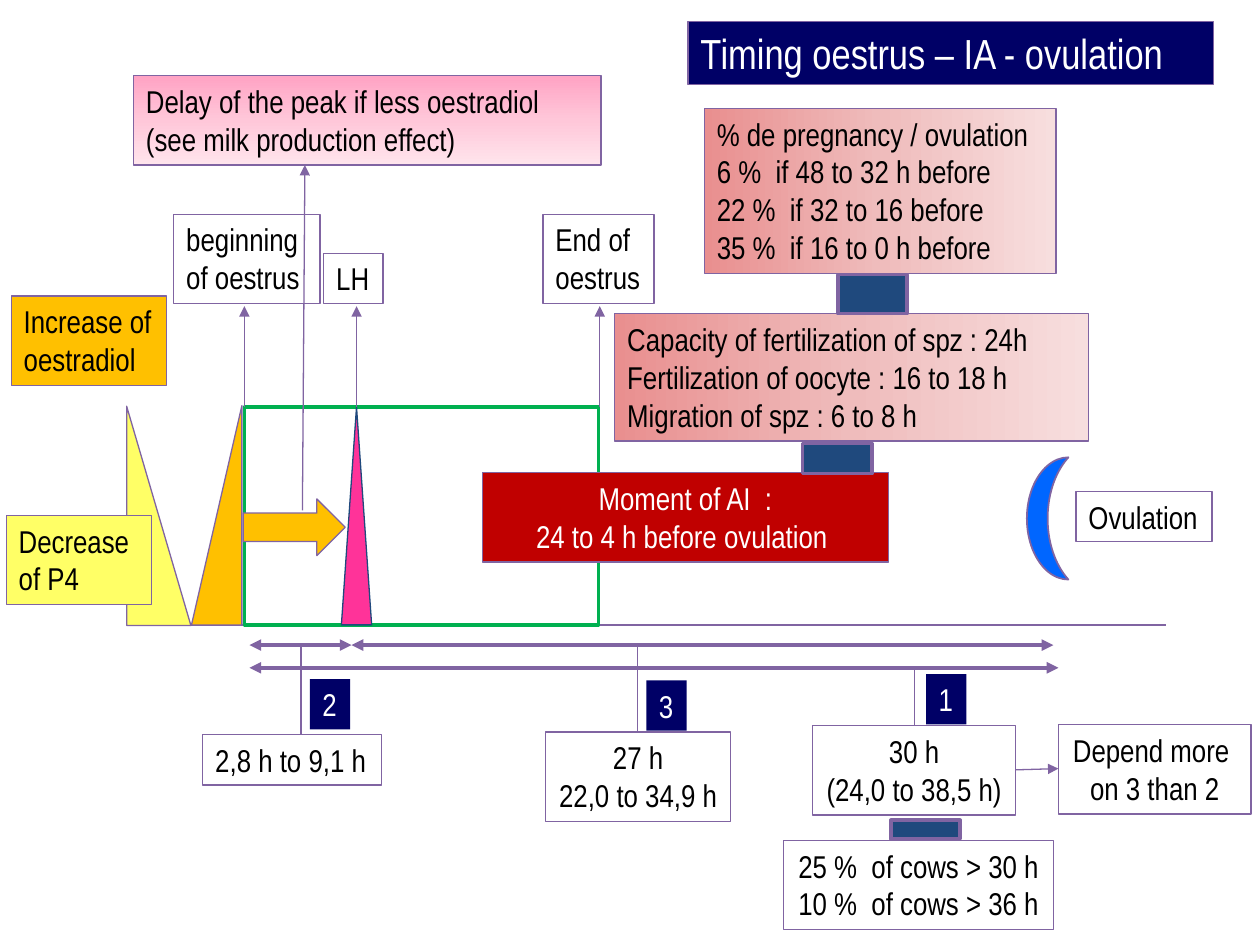
from copy import deepcopy

from lxml import etree
from pptx import Presentation
from pptx.dml.color import RGBColor
from pptx.enum.shapes import MSO_CONNECTOR, MSO_SHAPE
from pptx.enum.text import MSO_ANCHOR, MSO_AUTO_SIZE, PP_ALIGN
from pptx.oxml.ns import qn
from pptx.util import Inches, Pt

RECT = MSO_SHAPE.RECTANGLE
RIGHT_TRIANGLE = MSO_SHAPE.RIGHT_TRIANGLE
STRAIGHT = MSO_CONNECTOR.STRAIGHT
LEFT, CENTER = PP_ALIGN.LEFT, PP_ALIGN.CENTER
TOP = MSO_ANCHOR.TOP
FIT = MSO_AUTO_SIZE.SHAPE_TO_FIT_TEXT

FONT = "Arial Narrow"
BLACK = RGBColor(0x00, 0x00, 0x00)
WHITE = RGBColor(0xFF, 0xFF, 0xFF)
PURPLE = RGBColor(0x80, 0x64, 0xA2)
NAVY = RGBColor(0x00, 0x00, 0x66)
STEEL = RGBColor(0x1F, 0x49, 0x7D)
GREEN = RGBColor(0x00, 0xB0, 0x50)
PINK = RGBColor(0xFF, 0x33, 0x99)
BLUE = RGBColor(0x00, 0x66, 0xFF)
ORANGE = RGBColor(0xFF, 0xC0, 0x00)
YELLOW = RGBColor(0xFF, 0xFF, 0x66)
RED = RGBColor(0xC0, 0x00, 0x00)
ROSE_FADE = (RGBColor(0xE9, 0x8F, 0x8F), RGBColor(0xEF, 0xBC, 0xBC), RGBColor(0xF7, 0xDE, 0xDE))
PINK_FADE = (RGBColor(0xFF, 0xA3, 0xC4), RGBColor(0xFF, 0xC7, 0xD9), RGBColor(0xFF, 0xE4, 0xEC))

prs = Presentation()
prs.slide_width, prs.slide_height = Inches(10), Inches(7.5)
slide = prs.slides.add_slide(prs.slide_layouts[6])


def add_block(text, left, top, width, height, kind=RECT, fill=None, angle=0, line=PURPLE,
              weight=0.75, color=BLACK, size=18, align=LEFT, wrap=False):
    """Add a shape, with text if any; a tuple as fill is a three-stop gradient."""
    block = slide.shapes.add_shape(kind, Inches(left), Inches(top), Inches(width), Inches(height))
    block.shadow.inherit = False
    if fill is None:
        block.fill.background()
    elif isinstance(fill, RGBColor):
        block.fill.solid()
        block.fill.fore_color.rgb = fill
    else:
        block.fill.gradient()
        block.fill.gradient_angle = angle
        first_stop = block._element.spPr.find(".//" + qn("a:gs"))
        first_stop.addnext(deepcopy(first_stop))
        for stop, shade, position in zip(block.fill.gradient_stops, fill, (0, 0.5, 1)):
            stop.color.rgb = shade
            stop.position = position
    if line is None:
        block.line.fill.background()
    else:
        block.line.color.rgb = line
        block.line.width = Pt(weight)
    if text:
        frame = block.text_frame
        frame.word_wrap = wrap
        frame.auto_size = FIT
        frame.vertical_anchor = TOP
        for index, words in enumerate(text.split("\n")):
            paragraph = frame.add_paragraph() if index else frame.paragraphs[0]
            paragraph.alignment = align
            run = paragraph.add_run()
            run.text = words
            run.font.name, run.font.size = FONT, Pt(size)
            run.font.color.rgb = color
    return block


def add_line(x1, y1, x2, y2, weight=0.75, ends=()):
    """Add a straight line; ends lists "headEnd" (start) and "tailEnd" (finish) arrowheads."""
    connector = slide.shapes.add_connector(STRAIGHT, Inches(x1), Inches(y1), Inches(x2), Inches(y2))
    connector.line.color.rgb = PURPLE
    connector.line.width = Pt(weight)
    for end in ends:
        etree.SubElement(connector.line._get_or_add_ln(), qn("a:" + end), type="triangle")
    etree.SubElement(connector._element.spPr, qn("a:effectLst"))


ARROW = ("tailEnd",)
BOTH = ("headEnd", "tailEnd")

# Time axis, oestrus period and LH peak
add_line(1.01, 4.96, 9.25, 4.96)
add_block("", 1.94, 3.23, 2.81, 1.73, line=GREEN, weight=2)
add_block("", 2.71, 3.23, 0.24, 1.73, kind=MSO_SHAPE.ISOSCELES_TRIANGLE, fill=PINK, line=STEEL)
add_block("beginning\nof oestrus", 1.38, 1.7, 1.16, 0.71)
add_block("LH", 2.57, 2.01, 0.47, 0.4)
add_block("End of\noestrus", 4.31, 1.7, 0.88, 0.71)
for event_x in (1.94, 2.83, 4.76):
    add_line(event_x, 3.23, event_x, 2.43, ends=ARROW)

add_block("Ovulation", 8.54, 3.9, 1.08, 0.4)
add_block("", 8.15, 3.63, 0.33, 0.97, kind=MSO_SHAPE.MOON, fill=BLUE, weight=1)

# Hormones before oestrus
oestradiol_rise = add_block("", 0.85, 3.89, 1.74, 0.4, kind=RIGHT_TRIANGLE, fill=ORANGE)
p4_fall = add_block("", 0.39, 3.84, 1.74, 0.51, kind=RIGHT_TRIANGLE, fill=YELLOW)
oestradiol_rise.rotation = p4_fall.rotation = 270
p4_fall._element.spPr.xfrm.set("flipV", "1")
add_block("Decrease\nof P4", 0.05, 4.09, 1.15, 0.71, fill=YELLOW)
add_block("Increase of\noestradiol", 0.09, 2.35, 1.23, 0.71, fill=ORANGE)

# Intervals: span, drop line, number badge
for number, start, end, y, drop_x, drop_end, badge_x, badge_y in (
    ("2", 1.98, 2.79, 5.12, 2.39, 5.83, 2.46, 5.39),
    ("3", 2.79, 8.36, 5.12, 5.06, 5.81, 5.13, 5.4),
    ("1", 1.98, 8.4, 5.3, 7.26, 5.76, 7.35, 5.35),
):
    add_line(start, y, end, y, weight=2.25, ends=BOTH)
    add_line(drop_x, y, drop_x, drop_end)
    add_block(number, badge_x, badge_y, 0.32, 0.4, fill=NAVY, line=None, color=WHITE)

add_block("2,8 h to 9,1 h", 1.61, 5.83, 1.42, 0.4)
for text, left, top, width in (
    ("27 h\n22,0 to 34,9 h", 4.33, 5.81, 1.47),
    ("30 h\n(24,0 to 38,5 h)", 6.45, 5.76, 1.61),
    ("Depend more \non 3 than 2", 8.4, 5.75, 1.53),
    ("25 %  of cows > 30 h\n10 %  of cows > 36 h", 6.22, 6.67, 2.14),
):
    add_block(text, left, top, width, 0.71, align=CENTER)
add_line(8.06, 6.11, 8.4, 6.1, ends=ARROW)

# Insemination advice, with the links between its boxes
add_block("Moment of AI  :\n24 to 4 h before ovulation ", 3.83, 3.75, 3.22, 0.71,
          fill=RED, color=WHITE, align=CENTER, wrap=True)
add_block("Capacity of fertilization of spz : 24h Fertilization of oocyte : 16 to 18 h\n"
          "Migration of spz : 6 to 8 h", 4.88, 2.49, 3.76, 1.01, fill=ROSE_FADE, wrap=True)
add_block("% de pregnancy / ovulation\n6 %  if 48 to 32 h before\n22 %  if 32 to 16 before\n"
          "35 %  if 16 to 0 h before", 5.59, 0.86, 2.79, 1.31, fill=ROSE_FADE, wrap=True)
for left, top, height in ((6.65, 2.18, 0.31), (6.37, 3.52, 0.24), (7.07, 6.51, 0.15)):
    add_block("", left, top, 0.55, height, fill=STEEL, weight=2)

# Delay of the LH peak
add_block("", 1.93, 3.96, 0.81, 0.45, kind=MSO_SHAPE.RIGHT_ARROW, fill=ORANGE)
add_line(2.4, 4.05, 2.42, 1.31, ends=ARROW)
add_block("Delay of the peak if less oestradiol\n(see milk production effect)",
          1.06, 0.6, 3.71, 0.71, fill=PINK_FADE, angle=270, wrap=True)

add_block("Timing oestrus – IA - ovulation", 5.46, 0.17, 4.17, 0.5,
          fill=NAVY, color=WHITE, size=24, wrap=True)

prs.save("out.pptx")
